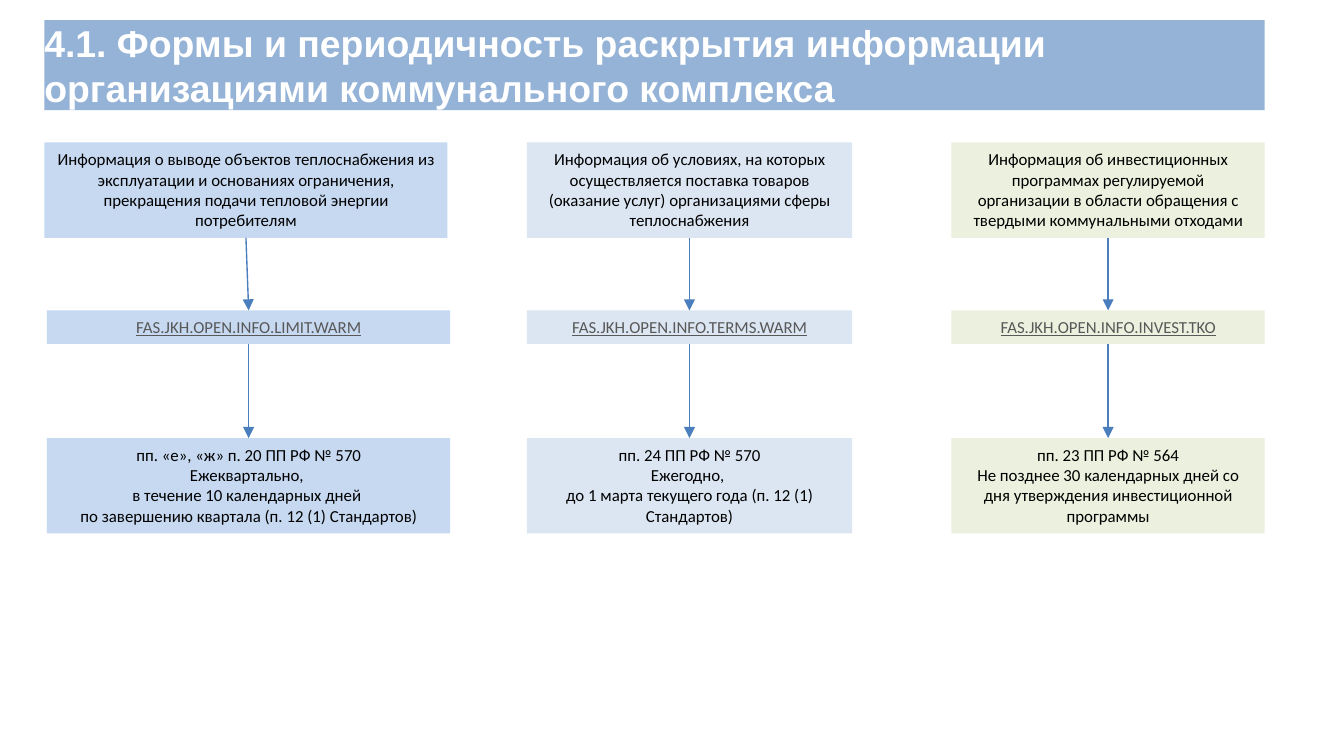
import dataclasses

import lxml.etree
import pptx
import pptx.dml.color
import pptx.enum.shapes
import pptx.enum.text
import pptx.oxml.ns
import pptx.shapes.autoshape
import pptx.slide
import pptx.util

Inches = pptx.util.Inches
Pt = pptx.util.Pt

COLORS: dict[str, str] = {
    "banner": "95B3D7",
    "banner_text": "FFFFFF",
    "limit": "C6D9F1",
    "terms": "DCE6F2",
    "invest": "EBF1DE",
    "text": "000000",
    "code": "585858",
    "arrow": "4B7EBC",
}
SLIDE_WIDTH = Inches(10)
SLIDE_HEIGHT = SLIDE_WIDTH * 9 // 16
ROWS: list[tuple[float, float]] = [(1.06, 0.71), (2.31, 0.25), (3.26, 0.71)]
CODE_ROW = 1


@dataclasses.dataclass(frozen=True)
class Disclosure:
    lefts: tuple[float, float, float]
    width: float
    color: str
    texts: tuple[str, str, str]


DISCLOSURES: list[Disclosure] = [
    Disclosure((0.33, 0.35, 0.35), 3, "limit", (
        "Информация о выводе объектов теплоснабжения из эксплуатации и основаниях "
        "ограничения, прекращения подачи тепловой энергии потребителям",
        "FAS.JKH.OPEN.INFO.LIMIT.WARM",
        "пп. «е», «ж» п. 20 ПП РФ № 570\nЕжеквартально, \vв течение 10 календарных дней "
        "\vпо завершению квартала (п. 12 (1) Стандартов)",
    )),
    Disclosure((3.92, 3.92, 3.92), 2.42, "terms", (
        "Информация об условиях, на которых осуществляется поставка товаров "
        "(оказание услуг) организациями сферы теплоснабжения",
        "FAS.JKH.OPEN.INFO.TERMS.WARM",
        "пп. 24 ПП РФ № 570\nЕжегодно, \vдо 1 марта текущего года (п. 12 (1) Стандартов)",
    )),
    Disclosure((7.08, 7.08, 7.08), 2.33, "invest", (
        "Информация об инвестиционных программах регулируемой организации "
        "в области обращения с твердыми коммунальными отходами",
        "FAS.JKH.OPEN.INFO.INVEST.TKO",
        "пп. 23 ПП РФ № 564\nНе позднее 30 календарных дней со дня утверждения "
        "инвестиционной программы",
    )),
]


def rgb(name: str) -> pptx.dml.color.RGBColor:
    return pptx.dml.color.RGBColor.from_string(COLORS[name])


def apply_format(target: object, values: dict[str, object]) -> None:
    for name, value in values.items():
        setattr(target, name, value)


def style_text(shape: pptx.shapes.autoshape.Shape, color: str,
               paragraph_format: dict[str, object], font_format: dict[str, object]) -> None:
    for paragraph in shape.text_frame.paragraphs:
        apply_format(paragraph, paragraph_format)
        for run in paragraph.runs:
            apply_format(run.font, font_format)
            run.font.color.rgb = rgb(color)


def fill_shape(shape: pptx.shapes.autoshape.Shape, color: str) -> None:
    shape.fill.solid()
    shape.fill.fore_color.rgb = rgb(color)


def format_heading(slide: pptx.slide.Slide) -> None:
    heading = slide.shapes.title
    apply_format(heading, {"left": Inches(0.33), "top": Inches(0.15),
                           "width": Inches(9.08), "height": Inches(0.67)})
    fill_shape(heading, "banner")
    heading.text_frame.text = ("4.1. Формы и периодичность раскрытия информации "
                               "организациями коммунального комплекса")
    apply_format(heading.text_frame, {
        "margin_left": 0, "margin_top": 0, "margin_right": 0, "margin_bottom": 0,
        "word_wrap": True,
        "auto_size": pptx.enum.text.MSO_AUTO_SIZE.NONE,
        "vertical_anchor": pptx.enum.text.MSO_ANCHOR.TOP,
    })
    style_text(heading, "banner_text",
               {"alignment": pptx.enum.text.PP_ALIGN.LEFT, "line_spacing": Pt(24)},
               {"name": "Arial", "size": Pt(20), "bold": True})


def add_box(slide: pptx.slide.Slide, disclosure: Disclosure,
            row: int) -> pptx.shapes.autoshape.Shape:
    top, height = ROWS[row]
    box = slide.shapes.add_shape(
        pptx.enum.shapes.MSO_SHAPE.RECTANGLE, Inches(disclosure.lefts[row]), Inches(top),
        Inches(disclosure.width), Inches(height))
    box.shadow.inherit = False
    fill_shape(box, disclosure.color)
    box.line.fill.background()
    box.text_frame.text = disclosure.texts[row]
    apply_format(box.text_frame, {
        "word_wrap": True,
        "vertical_anchor": pptx.enum.text.MSO_ANCHOR.TOP,
        "auto_size": pptx.enum.text.MSO_AUTO_SIZE.SHAPE_TO_FIT_TEXT,
    })
    is_code = row == CODE_ROW
    style_text(box, "code" if is_code else "text",
               {"alignment": pptx.enum.text.PP_ALIGN.CENTER},
               {"name": "Calibri", "size": Pt(9), "underline": is_code})
    return box


def add_arrow(slide: pptx.slide.Slide, upper: pptx.shapes.autoshape.Shape,
              lower: pptx.shapes.autoshape.Shape) -> None:
    arrow = slide.shapes.add_connector(pptx.enum.shapes.MSO_CONNECTOR.STRAIGHT, 0, 0, 0, 0)
    arrow.begin_connect(upper, 2)
    arrow.end_connect(lower, 0)
    arrow.line.width = Pt(0.75)
    arrow.line.color.rgb = rgb("arrow")
    qn = pptx.oxml.ns.qn
    properties = arrow.element.spPr
    lxml.etree.SubElement(properties.find(qn("a:ln")), qn("a:tailEnd"), type="triangle")
    lxml.etree.SubElement(properties, qn("a:effectLst"))


def main() -> None:
    presentation = pptx.Presentation()
    apply_format(presentation, {"slide_width": SLIDE_WIDTH, "slide_height": SLIDE_HEIGHT})
    slide = presentation.slides.add_slide(presentation.slide_layouts[5])
    format_heading(slide)
    for disclosure in DISCLOSURES:
        boxes = [add_box(slide, disclosure, row) for row in range(len(ROWS))]
        for upper, lower in zip(boxes, boxes[1:]):
            add_arrow(slide, upper, lower)
    presentation.save("out.pptx")


if __name__ == "__main__":
    main()
